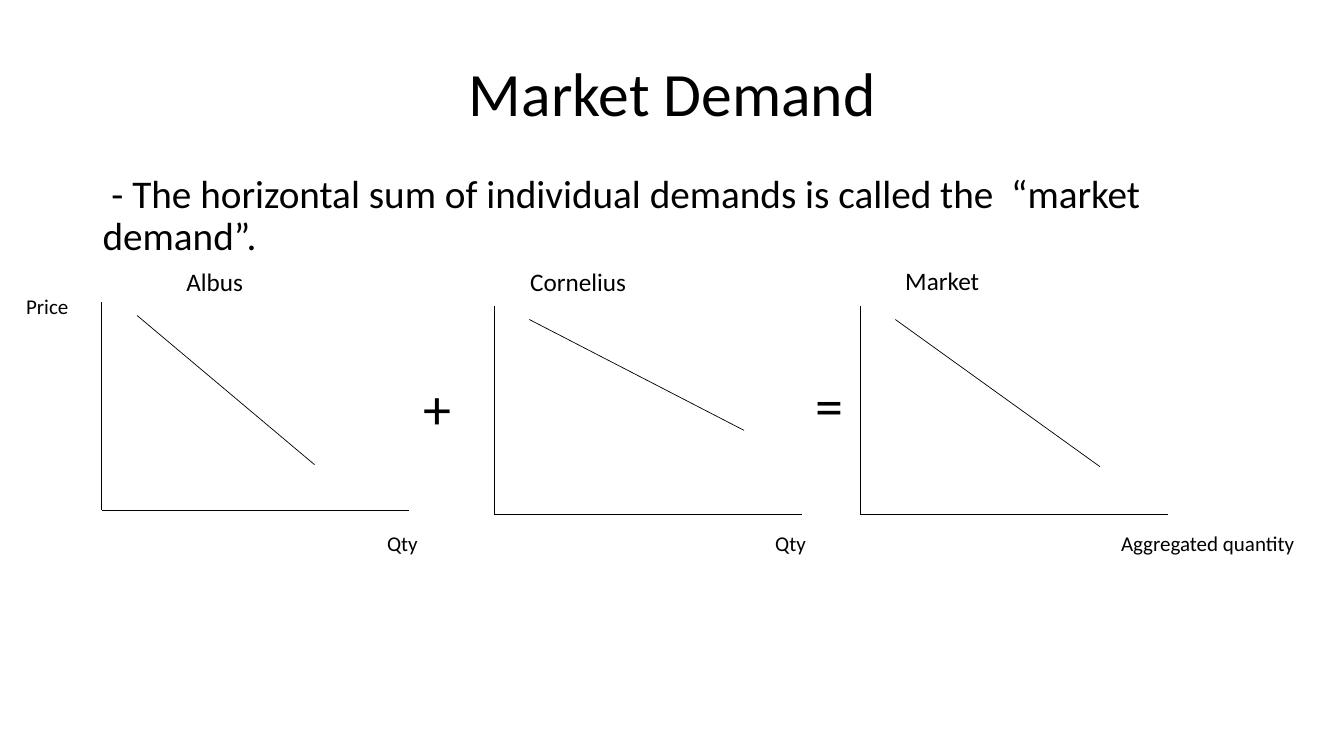
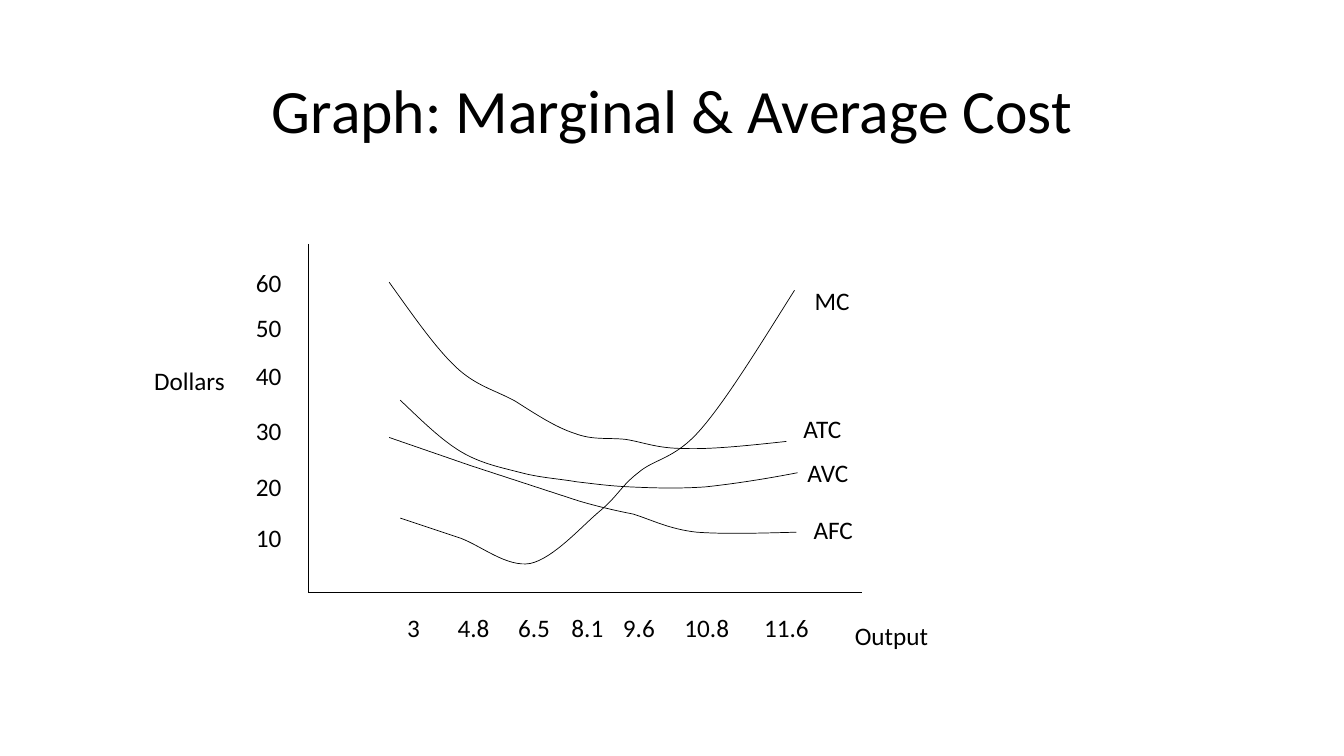
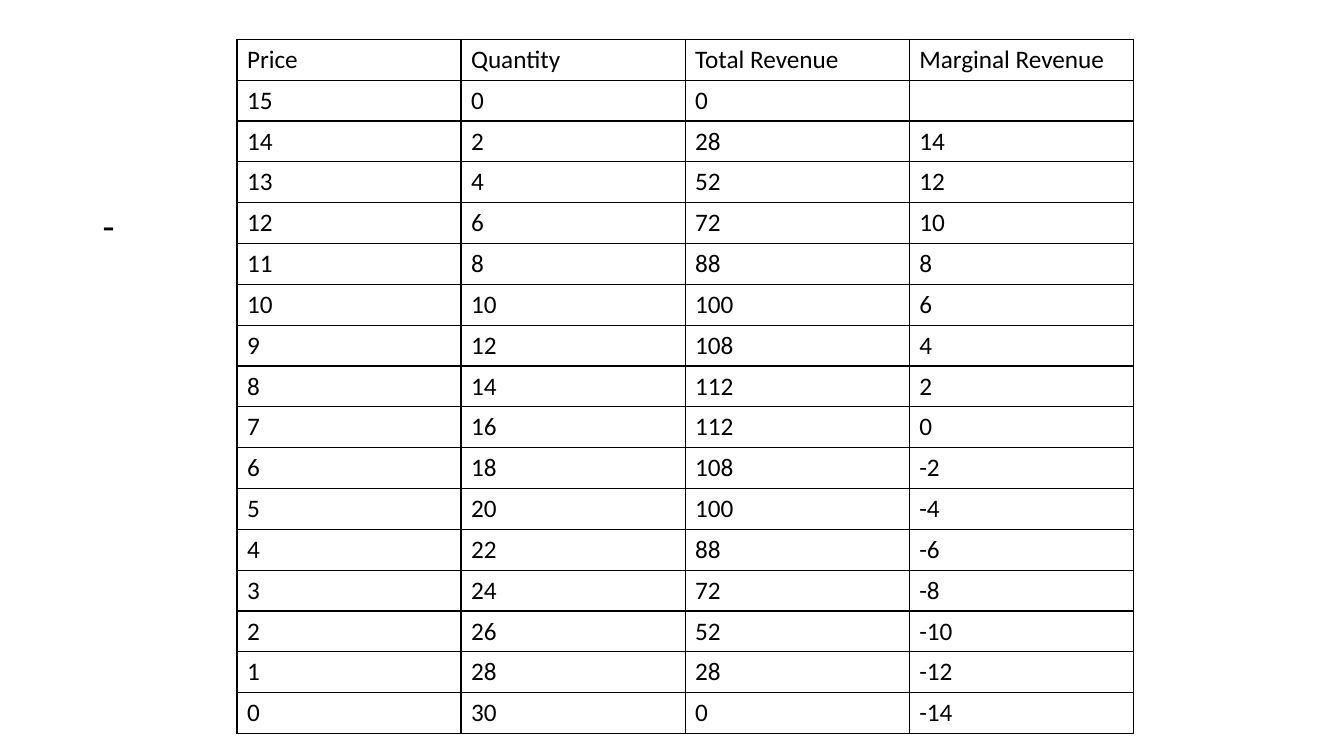
from lxml import etree
from pptx import Presentation
from pptx.dml.color import RGBColor
from pptx.enum.shapes import MSO_CONNECTOR
from pptx.enum.text import MSO_ANCHOR, PP_ALIGN
from pptx.oxml.ns import qn
from pptx.util import Inches, Pt

STRAIGHT = MSO_CONNECTOR.STRAIGHT
MIDDLE = MSO_ANCHOR.MIDDLE
LEFT, CENTER = PP_ALIGN.LEFT, PP_ALIGN.CENTER

COLORS = {"ink": "000000", "page": "FFFFFF"}
FONT = "Calibri"
THIN = 0.5

# Each curve: start point, then segments of one point (line) or three (cubic).
CURVES = {
    "ATC": ((0.86, 0.8), [
        [(1.09, 1.12), (1.31, 1.44), (1.52, 1.64)],
        [(1.72, 1.83), (1.91, 1.87), (2.11, 1.98)],
        [(2.3, 2.1), (2.51, 2.24), (2.7, 2.3)],
        [(2.88, 2.37), (3.03, 2.34), (3.21, 2.36)],
        [(3.39, 2.39), (3.52, 2.45), (3.79, 2.45)],
        [(4.05, 2.46), (4.43, 2.42), (4.8, 2.38)]]),
    "AVC": ((0.97, 1.97), [
        [(1.17, 2.16), (1.37, 2.36), (1.57, 2.48)],
        [(1.77, 2.6), (1.98, 2.64), (2.17, 2.69)],
        [(2.36, 2.74), (2.55, 2.75), (2.72, 2.78)],
        [(2.9, 2.8), (3.03, 2.82), (3.24, 2.83)],
        [(3.45, 2.84), (3.72, 2.85), (4, 2.83)],
        [(4.28, 2.8), (4.6, 2.75), (4.91, 2.69)]]),
    "AFC": ((0.86, 2.34), [
        [(1.67, 2.62)],
        [(2.74, 2.97)],
        [(3.01, 3.05), (3.28, 3.1), (3.28, 3.1)],
        [(3.47, 3.16), (3.64, 3.25), (3.91, 3.28)],
        [(4.18, 3.3), (4.54, 3.29), (4.9, 3.28)]]),
    "MC": ((0.97, 3.14), [
        [(1.57, 3.34)],
        [(1.78, 3.42), (2.03, 3.63), (2.26, 3.59)],
        [(2.49, 3.54), (2.77, 3.22), (2.95, 3.07)],
        [(3.13, 2.92), (3.16, 2.82), (3.33, 2.69)],
        [(3.49, 2.55), (3.69, 2.56), (3.95, 2.26)],
        [(4.21, 1.96), (4.54, 1.42), (4.88, 0.88)]]),
}
TAGS = {"MC": (4.98, 0.78), "ATC": (4.87, 2.05), "AVC": (4.91, 2.49),
        "AFC": (4.97, 3.05), "Dollars": (-1.57, 1.58), "Output": (5.38, 4.11)}
OUTPUTS = {"3": 0.94, "4.8": 1.44, "6.5": 2.04, "8.1": 2.57, "9.6": 3.08,
           "10.8": 3.69, "11.6": 4.48}
DOLLARS = {"10": 3.13, "20": 2.63, "30": 2.07, "40": 1.53, "50": 1.05,
           "60": 0.6}


def color(name):
    return RGBColor.from_string(COLORS[name])


def style(para, size):
    para.font.name = FONT
    para.font.size = Pt(size)
    para.font.color.rgb = color("ink")


def write(slide, text, x, y, w=2.31, h=0.4, size=18, align=LEFT):
    box = slide.shapes.add_textbox(Inches(x), Inches(y), Inches(w), Inches(h))
    frame = box.text_frame
    frame.word_wrap = True
    para = frame.paragraphs[0]
    para.text = text
    para.alignment = align
    style(para, size)
    return frame


def title(slide, text, y):
    frame = write(slide, text, 0.92, y, 11.5, 1.45, 44, CENTER)
    frame.vertical_anchor = MIDDLE
    frame.paragraphs[0].line_spacing = 0.9


def body(slide, text, y):
    frame = write(slide, text, 0.92, y, 11.5, 4.76, 28)
    frame.paragraphs[0].line_spacing = 0.9


def line(slide, x1, y1, x2, y2):
    link = slide.shapes.add_connector(
        STRAIGHT, Inches(x1), Inches(y1), Inches(x2), Inches(y2))
    link.line.color.rgb = color("ink")
    link.line.width = Pt(THIN)
    etree.SubElement(link._element.spPr, qn("a:effectLst"))


def axes(slide, x, y, w, h):
    line(slide, x, y, x, y + h)
    line(slide, x, y + h, x + w, y + h)


def curve(slide, x, y, start, parts):
    """Draw an open outline, turning each three-point part into a cubic."""
    pen = slide.shapes.build_freeform(
        Inches(x + start[0]), Inches(y + start[1]))
    pen.add_line_segments(
        [(Inches(x + px), Inches(y + py)) for part in parts for px, py in part],
        close=False)
    shape = pen.convert_to_shape()
    shape.shadow.inherit = False
    shape.fill.background()
    shape.line.color.rgb = color("ink")
    shape.line.width = Pt(THIN)
    steps = iter(list(shape._element.iter(qn("a:lnTo"))))
    for part in parts:
        first, *rest = [next(steps) for _ in part]
        if rest:
            cubic = etree.Element(qn("a:cubicBezTo"))
            first.addprevious(cubic)
            for step in (first, *rest):
                cubic.append(step[0])
                step.getparent().remove(step)


def panel(slide, x, y, name, name_at, end, unit, unit_at):
    """Draw one demand graph; all offsets are from its top left corner."""
    axes(slide, x, y, 3.05, 2.06)
    line(slide, x + 0.35, y + 0.13, x + end[0], y + end[1])
    write(slide, name, x + name_at[0], y + name_at[1])
    write(slide, unit, x + unit_at[0], y + unit_at[1], h=0.35, size=15)


def demand(slide):
    title(slide, "Market Demand", 0.23)
    body(slide, " - The horizontal sum of individual demands is called the"
                "  “market demand”.", 1.68)
    panel(slide, 1.01, 3, "Albus", (0.74, -0.41), (2.11, 1.61),
          "Qty", (2.73, 2.21))
    panel(slide, 4.9, 3.04, "Cornelius", (0.26, -0.45), (2.48, 1.23),
          "Qty", (2.69, 2.17))
    panel(slide, 8.53, 3.04, "Market", (0.35, -0.46), (2.38, 1.59),
          "Aggregated quantity", (2.49, 2.17))
    write(slide, "Price", 0.16, 2.86, h=0.35, size=15)
    for sign, x, y in (("+", 4.1, 3.66), ("=", 7.99, 3.63)):
        write(slide, sign, x, y, 0.48, 0.77, 40)


def graph(slide, x, y):
    axes(slide, x + 0.06, y + 0.42, 5.49, 3.46)
    for text, dx in OUTPUTS.items():
        write(slide, text, x + dx, y + 4.03, 0.8)
    for text, dy in DOLLARS.items():
        write(slide, text, x - 0.56, y + dy, 0.62)
    for start, parts in CURVES.values():
        curve(slide, x, y, start, parts)
    for text, (dx, dy) in TAGS.items():
        write(slide, text, x + dx, y + dy, 1.05)


def cost(slide):
    title(slide, "Graph: Marginal & Average Cost", 0.4)
    graph(slide, 3, 2)


def border(cell):
    props = cell._tc.get_or_add_tcPr()
    for i, side in enumerate(("lnL", "lnR", "lnT", "lnB")):
        edge = etree.Element(qn("a:" + side), w=str(Pt(1)))
        fill = etree.SubElement(edge, qn("a:solidFill"))
        etree.SubElement(fill, qn("a:srgbClr"), val=COLORS["ink"])
        props.insert(i, edge)


def sales():
    """Rows of price, quantity, total and marginal revenue."""
    rows = [("Price", "Quantity", "Total Revenue", "Marginal Revenue")]
    for i in range(16):
        price, count = 15 - i, 2 * i
        rows.append((price, count, price * count, 16 - count if i else ""))
    return rows


def grid(slide, rows, x, y, w, h):
    table = slide.shapes.add_table(
        len(rows), len(rows[0]), Inches(x), Inches(y), Inches(w),
        Inches(h)).table
    table.first_row = table.horz_banding = False
    for r, row in enumerate(rows):
        for c, value in enumerate(row):
            cell = table.cell(r, c)
            cell.text = str(value)
            style(cell.text_frame.paragraphs[0], 18)
            cell.fill.background()
            border(cell)


def revenue(slide):
    body(slide, "-", 2)
    grid(slide, sales(), 2.35, 0.39, 8.89, 6.89)


def main():
    deck = Presentation()
    deck.slide_width, deck.slide_height = Inches(13.33), Inches(7.5)
    for fill in (demand, cost, revenue):
        slide = deck.slides.add_slide(deck.slide_layouts[6])
        back = slide.background.fill
        back.solid()
        back.fore_color.rgb = color("page")
        fill(slide)
    deck.save("out.pptx")


if __name__ == "__main__":
    main()
